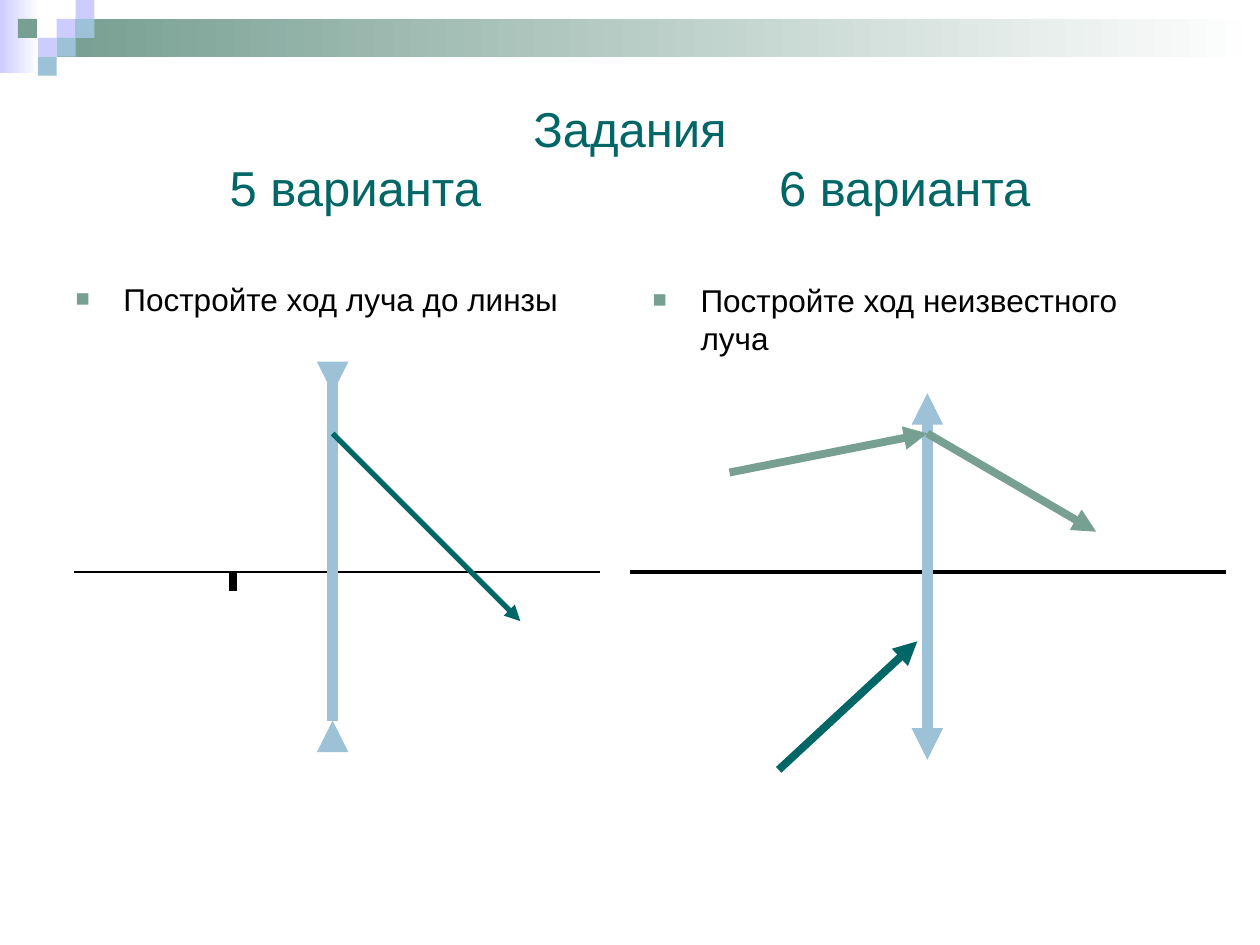
"""Build a slide with two lens ray-tracing tasks."""
from lxml.etree import SubElement
from pptx import Presentation
from pptx.dml.color import RGBColor
from pptx.enum.shapes import MSO_CONNECTOR as Connector, MSO_SHAPE as Shape
from pptx.enum.text import MSO_ANCHOR as Anchor, MSO_AUTO_SIZE as AutoSize, PP_ALIGN as Align
from pptx.oxml.ns import qn
from pptx.util import Inches, Pt

TEAL, SAGE, SKY, LILAC = "006666", "779F92", "9DC2D7", "CCCCFF"
WHITE, BLACK = "FFFFFF", "000000"


def color(value):
    return RGBColor.from_string(value)


def write(paragraph, text, size=18, ink=BLACK, align=Align.LEFT, font="Arial"):
    paragraph.alignment = align
    run = paragraph.add_run()
    run.text = text
    run.font.name = font
    run.font.size = Pt(size)
    run.font.color.rgb = color(ink)


class LensSlide:
    """Holds the style and the current slide."""

    def __init__(self, deck):
        self.slide = deck.slides.add_slide(deck.slide_layouts[3])
        self.title, self.left_task, self.right_task = self.slide.placeholders
        self.title_size = 28
        self.unit = 0.15

    def place(self, holder, left, top, width, height, anchor):
        holder.left, holder.top = Inches(left), Inches(top)
        holder.width, holder.height = Inches(width), Inches(height)
        frame = holder.text_frame
        frame.auto_size = AutoSize.NONE
        frame.word_wrap = True
        frame.vertical_anchor = anchor
        return frame

    def heading(self, text, variants, centers):
        frame = self.place(self.title, 0.5, 0.5, 9, 1.5, Anchor.MIDDLE)
        write(frame.paragraphs[0], text, self.title_size, TEAL, Align.CENTER)
        row = frame.add_paragraph()
        write(row, "".join("\t" + name for name in variants), self.title_size, TEAL)
        stops = SubElement(row._p.get_or_add_pPr(), qn("a:tabLst"))
        for center in centers:
            SubElement(stops, qn("a:tab"), pos=str(Inches(center)), algn="ctr")

    def task(self, holder, text, left, top):
        frame = self.place(holder, left, top, 4.42, 4.25, Anchor.TOP)
        paragraph = frame.paragraphs[0]
        write(paragraph, text)
        paragraph.space_before = Pt(3.6)
        props = paragraph._p.get_or_add_pPr()
        props.set("marL", str(Inches(0.38)))
        props.set("indent", str(Inches(-0.38)))
        SubElement(SubElement(props, qn("a:buClr")), qn("a:srgbClr"), val=SAGE)
        SubElement(props, qn("a:buSzPct"), val="75000")
        SubElement(props, qn("a:buFont"), typeface="Arial")
        SubElement(props, qn("a:buChar"), char="■")

    def block(self, left, top, width, height, tint, fade=False):
        box = self.slide.shapes.add_shape(
            Shape.RECTANGLE, Inches(left), Inches(top), Inches(width), Inches(height))
        box.shadow.inherit = False
        box.line.fill.background()
        if fade:
            box.fill.gradient()
            box.fill.gradient_angle = 0
            for stop, shade in zip(box.fill.gradient_stops, (tint, WHITE)):
                stop.color.rgb = color(shade)
        else:
            box.fill.solid()
            box.fill.fore_color.rgb = color(tint)

    def square(self, column, row, tint):
        self.block(column * self.unit, row * self.unit, self.unit, self.unit, tint)

    def ray(self, start, end, tint, weight, arrow=True):
        line = self.slide.shapes.add_connector(
            Connector.STRAIGHT, *(Inches(value) for value in (*start, *end)))
        line.line.color.rgb = color(tint)
        line.line.width = Pt(weight)
        if arrow:
            SubElement(line.line._get_or_add_ln(), qn("a:tailEnd"), type="triangle")
        SubElement(line._element.spPr, qn("a:effectLst"))


def main():
    deck = Presentation()
    deck.slide_width, deck.slide_height = Inches(10), Inches(7.5)
    page = LensSlide(deck)

    page.block(0, 0, 0.31, 0.58, LILAC, fade=True)
    page.block(0.45, 0.15, 9.55, 0.3, SAGE, fade=True)
    for column, row, tint in ((3, 1, LILAC), (4, 0, LILAC), (4, 1, SKY), (2, 2, LILAC),
                              (0.95, 1, SAGE), (3, 2, SKY), (2, 3, SKY)):
        page.square(column, row, tint)

    page.heading("Задания", ("5 варианта", "6 варианта"), (2.22, 6.58))
    page.task(page.left_task, "Постройте ход луча до линзы", 0.5, 2.17)
    page.task(page.right_task, "Постройте ход неизвестного луча", 5.08, 2.18)

    axis, hit = 4.54, 3.44
    diverging, converging, focus = 2.64, 7.36, 1.85

    page.ray((0.59, axis), (4.76, axis), BLACK, 1.5, arrow=False)
    page.ray((diverging, 3.04), (diverging, 5.72), SKY, 6, arrow=False)
    for outer, inner in ((2.96, 3.12), (5.95, 5.72)):
        page.ray((diverging, outer), (diverging, inner), SKY, 6)
    page.ray((focus, axis), (focus, 4.69), BLACK, 4.5, arrow=False)
    page.ray((diverging, hit), (4.13, 4.93), TEAL, 3)

    page.ray((5, axis), (9.73, axis), BLACK, 2.25, arrow=False)
    for tip in (3.12, 6.03):
        page.ray((converging, axis), (converging, tip), SKY, 6)
    page.ray((5.79, 3.75), (converging, hit), SAGE, 4.5)
    page.ray((converging, hit), (8.7, 4.22), SAGE, 4.5)
    page.ray((6.18, 6.11), (7.28, 5.09), TEAL, 4.5)

    deck.save("out.pptx")


if __name__ == "__main__":
    main()
